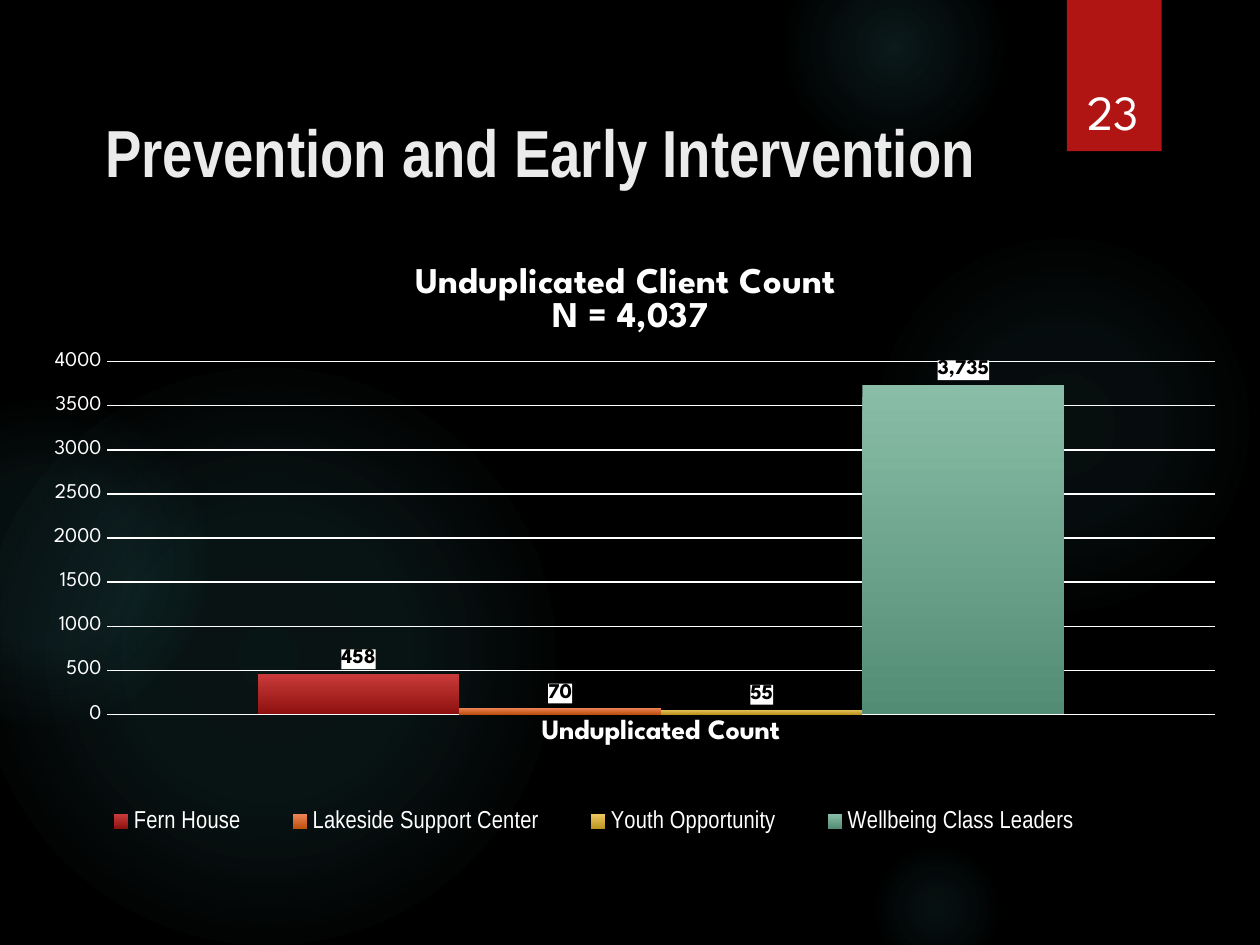
import pptx
import pptx.chart.data
import pptx.dml.color
import pptx.enum.chart
import pptx.enum.shapes
import pptx.enum.text
import pptx.oxml
import pptx.oxml.ns
import pptx.util
from dataclasses import dataclass
from lxml import etree

Cm = pptx.util.Cm
Pt = pptx.util.Pt
qn = pptx.oxml.ns.qn
NSDECLS = pptx.oxml.ns.nsdecls("a", "c")


@dataclass(frozen=True)
class Theme:
    heading_font: str = "Arial Narrow"
    body_font: str = "League Spartan"
    background: str = "000000"
    glow: str = "50B9C1"
    tab: str = "B01513"
    heading: str = "EBEBEB"
    light: str = "FFFFFF"
    dark: str = "000000"
    title_size: int = 38
    number_size: int = 28
    chart_title_size: float = 20.7
    category_size: int = 16
    legend_size: int = 14
    label_size: int = 12
    chart_size: int = 10


THEME = Theme()

# left, top, diameter in cm; then (position %, opacity %) stops
GLOWS = [
    (17.5, 4.65, 7.82, [(0, 7), (36, 6), (69, 0)]),
    (15.8, -1.27, 4.45, [(0, 14), (36, 7), (73, 0)]),
    (17.5, 16.94, 2.74, [(0, 9), (36, 5), (66, 0)]),
    (-0.43, 7.42, 11.63, [(0, 11), (36, 10), (75, 0)]),
    (-2.34, 8.05, 6.55, [(0, 8), (36, 8), (72, 0)]),
]

# name, clients, top colour, bottom colour, number format
PROGRAMS = [
    ("Fern House", 458, "C93B3A", "8D110F", "General"),
    ("Lakeside Support Center", 70, "EE8455", "BC4F0E", "General"),
    ("Youth Opportunity", 55, "EBC65F", "BB941F", "General"),
    ("Wellbeing Class Leaders", 3735, "89BDA7", "538C74", "#,##0"),
]


def rgb(value):
    return pptx.dml.color.RGBColor.from_string(value)


def apply(obj, values):
    for name, value in values.items():
        setattr(obj, name, value)


def set_font(font, name, size, color, bold=False):
    apply(font, {"name": name, "size": Pt(size), "bold": bold})
    font.color.rgb = rgb(color)


def add_shape(s, kind, left, top, width, height):
    sp = s.shapes.add_shape(kind, Cm(left), Cm(top), Cm(width), Cm(height))
    sp.shadow.inherit = False
    sp.line.fill.background()
    return sp


def add_glow(s, left, top, size, stops):
    sp = add_shape(s, pptx.enum.shapes.MSO_SHAPE.OVAL, left, top, size, size)
    sp.fill.background()
    stop_xml = "".join(
        f'<a:gs pos="{pos * 1000}"><a:srgbClr val="{THEME.glow}">'
        f'<a:alpha val="{alpha * 1000}"/></a:srgbClr></a:gs>'
        for pos, alpha in stops)
    grad = pptx.oxml.parse_xml(
        f'<a:gradFill {NSDECLS} rotWithShape="1"><a:gsLst>{stop_xml}</a:gsLst>'
        '<a:path path="circle"><a:fillToRect l="50000" t="50000" r="50000" b="50000"/>'
        '</a:path></a:gradFill>')
    sppr = sp.element.spPr
    sppr.replace(sppr.find(qn("a:noFill")), grad)


def add_text(s, box, text, font):
    tf = s.shapes.add_textbox(*map(Cm, box)).text_frame
    apply(tf, {"word_wrap": True, "margin_top": 0, "margin_bottom": 0,
               "vertical_anchor": pptx.enum.text.MSO_ANCHOR.BOTTOM})
    p = tf.paragraphs[0]
    p.alignment = pptx.enum.text.PP_ALIGN.CENTER
    r = p.add_run()
    r.text = text
    set_font(r.font, *font)


def set_layout(element, index, inner=False, **fractions):
    """Place a chart part by fractions of the chart area."""
    for old in element.findall(qn("c:layout")):
        element.remove(old)
    layout = etree.Element(qn("c:layout"))
    manual = etree.SubElement(layout, qn("c:manualLayout"))
    if inner:
        etree.SubElement(manual, qn("c:layoutTarget")).set("val", "inner")
    for mode in ("xMode", "yMode"):
        etree.SubElement(manual, qn(f"c:{mode}")).set("val", "edge")
    for name, value in fractions.items():
        etree.SubElement(manual, qn(f"c:{name}")).set("val", str(value))
    element.insert(index, layout)


def style_series(series, top, bottom, number_format):
    fill = series.format.fill
    fill.gradient()
    fill.gradient_angle = 270
    for stop, color, pos in zip(fill.gradient_stops, (top, bottom), (0, 1)):
        stop.color.rgb = rgb(color)
        stop.position = pos
    labels = series.data_labels
    apply(labels, {"show_value": True, "number_format": number_format,
                   "number_format_is_linked": False,
                   "position": pptx.enum.chart.XL_LABEL_POSITION.OUTSIDE_END})
    set_font(labels.font, THEME.body_font, THEME.label_size, THEME.dark, True)
    # White plate behind each value
    series._element.find(qn("c:dLbls")).find(qn("c:txPr")).addprevious(
        pptx.oxml.parse_xml(
            f'<c:spPr {NSDECLS}><a:solidFill><a:srgbClr val="{THEME.light}"/>'
            '</a:solidFill></c:spPr>'))


def style_axes(chart):
    no_tick = pptx.enum.chart.XL_TICK_MARK.NONE
    cat, val = chart.category_axis, chart.value_axis
    for axis, size, bold in ((cat, THEME.category_size, True),
                             (val, THEME.label_size, False)):
        apply(axis, {"major_tick_mark": no_tick, "minor_tick_mark": no_tick})
        set_font(axis.tick_labels.font, THEME.body_font, size, THEME.light, bold)
    apply(val, {"minimum_scale": 0, "maximum_scale": 4000, "major_unit": 500,
                "has_major_gridlines": True})
    val.format.line.fill.background()
    for line, width in ((cat.format.line, 1), (val.major_gridlines.format.line, 0.75)):
        line.color.rgb = rgb(THEME.light)
        line.width = Pt(width)


def add_client_chart(s):
    data = pptx.chart.data.CategoryChartData()
    data.categories = ["Unduplicated Count"]
    for name, clients, *_ in PROGRAMS:
        data.add_series(name, [clients])
    chart = s.shapes.add_chart(
        pptx.enum.chart.XL_CHART_TYPE.COLUMN_CLUSTERED,
        Cm(0.43), Cm(4.88), Cm(24.56), Cm(12.7), data).chart
    set_font(chart.font, THEME.body_font, THEME.chart_size, THEME.light)

    # Columns
    plot = chart.plots[0]
    apply(plot, {"gap_width": 150, "overlap": 0, "vary_by_categories": False})
    for series, (_, _, *style) in zip(plot.series, PROGRAMS):
        style_series(series, *style)
    style_axes(chart)

    # Title
    chart.has_title = True
    tf = chart.chart_title.text_frame
    tf.text = "Unduplicated Client Count \nN = 4,037"
    for p in tf.paragraphs:
        set_font(p.runs[0].font, THEME.body_font, THEME.chart_title_size,
                 THEME.light, True)

    # Legend
    chart.has_legend = True
    apply(chart.legend, {"position": pptx.enum.chart.XL_LEGEND_POSITION.BOTTOM,
                         "include_in_layout": False})
    set_font(chart.legend.font, THEME.heading_font, THEME.legend_size, THEME.light)

    # Placement
    area = chart._chartSpace.find(qn("c:chart"))
    set_layout(area.find(qn("c:title")), 1, x=0.32, y=0.03)
    set_layout(area.find(qn("c:plotArea")), 0, inner=True,
               x=0.07, y=0.19, w=0.91, h=0.56)
    set_layout(area.find(qn("c:legend")), 1, x=0.04, y=0.88, w=0.86, h=0.08)


def main():
    prs = pptx.Presentation()
    apply(prs, {"slide_width": Cm(25.4), "slide_height": Cm(19.05)})
    s = prs.slides.add_slide(prs.slide_layouts[6])

    # Backdrop
    s.background.fill.solid()
    s.background.fill.fore_color.rgb = rgb(THEME.background)
    for glow in GLOWS:
        add_glow(s, *glow)

    # Page number tab
    tab = add_shape(s, pptx.enum.shapes.MSO_SHAPE.RECTANGLE, 21.51, 0, 1.91, 3.05)
    tab.fill.solid()
    tab.fill.fore_color.rgb = rgb(THEME.tab)

    # Heading, number and chart
    add_text(s, (0.84, 2.15, 20.12, 1.7), "Prevention and Early Intervention",
             (THEME.heading_font, THEME.title_size, THEME.heading, True))
    add_text(s, (21.56, 0.81, 1.75, 2.01), "23",
             (THEME.body_font, THEME.number_size, THEME.light))
    add_client_chart(s)
    prs.save("out.pptx")


if __name__ == "__main__":
    main()
